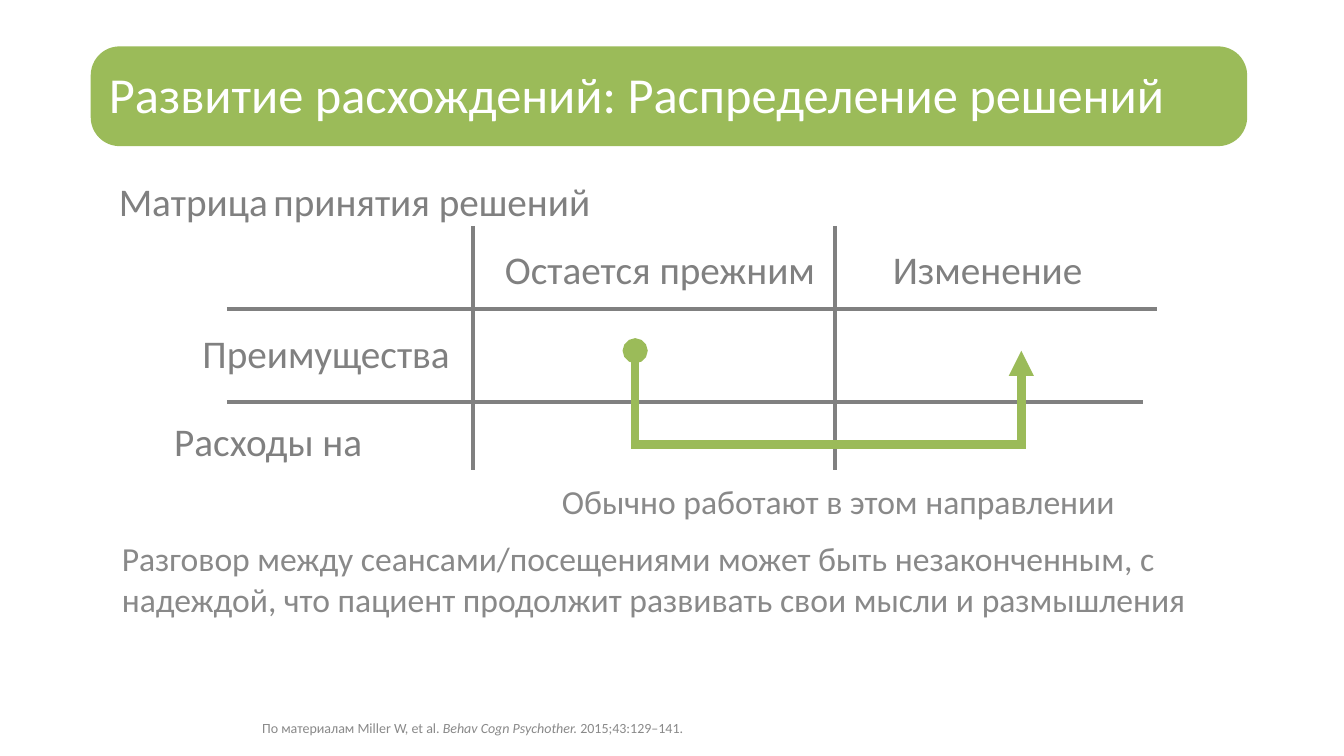
from dataclasses import dataclass

from lxml import etree
from pptx import Presentation
from pptx.dml.color import RGBColor
from pptx.enum.shapes import MSO_CONNECTOR, MSO_SHAPE
from pptx.enum.text import MSO_ANCHOR, PP_ALIGN
from pptx.oxml.ns import qn
from pptx.util import Inches, Pt

STRAIGHT = MSO_CONNECTOR.STRAIGHT
ROUNDED = MSO_SHAPE.ROUNDED_RECTANGLE
LEFT, CENTER = PP_ALIGN.LEFT, PP_ALIGN.CENTER
TOP, MIDDLE, BOTTOM = MSO_ANCHOR.TOP, MSO_ANCHOR.MIDDLE, MSO_ANCHOR.BOTTOM


@dataclass(frozen=True)
class Theme:
    font: str = "Calibri"
    accent: RGBColor = RGBColor(0x9B, 0xBB, 0x59)
    dark: RGBColor = RGBColor(0x80, 0x80, 0x80)
    soft: RGBColor = RGBColor(0x89, 0x89, 0x89)
    white: RGBColor = RGBColor(0xFF, 0xFF, 0xFF)
    title: int = 36
    label: int = 28
    body: int = 24
    gap: int = 18
    source: int = 10
    grid_line: float = 2.75
    arrow_line: float = 6


THEME = Theme()


def add_text(slide, box, parts, size, color, align=LEFT, anchor=TOP,
             inset=True, line_spacing=None):
    shape = slide.shapes.add_textbox(*map(Inches, box))
    frame = shape.text_frame
    frame.word_wrap = True
    frame.vertical_anchor = anchor
    if not inset:
        frame.margin_left = frame.margin_right = 0
        frame.margin_top = frame.margin_bottom = 0
    paragraph = frame.paragraphs[0]
    paragraph.alignment = align
    if line_spacing:
        paragraph.line_spacing = line_spacing
    for part in parts:
        run = paragraph.add_run()
        run.text = part
        run.font.name = THEME.font
        run.font.size = Pt(size)
        run.font.color.rgb = color
    return paragraph


def add_title(slide, box):
    left, top, width, height = box
    banner = slide.shapes.add_shape(ROUNDED, *map(Inches, box))
    banner.adjustments[0] = 0.29
    banner.shadow.inherit = False
    banner.fill.solid()
    banner.fill.fore_color.rgb = THEME.accent
    banner.line.fill.background()
    add_text(slide, (left + 0.18, top + 0.16, width - 0.29, height - 0.27),
             ["Развитие расхождений: Распределение решений"],
             THEME.title, THEME.white, anchor=MIDDLE, inset=False, line_spacing=0.8)


def add_grid_line(slide, start, end):
    line = slide.shapes.add_connector(STRAIGHT, *map(Inches, start + end))
    line.line.color.rgb = THEME.dark
    line.line.width = Pt(THEME.grid_line)
    etree.SubElement(line._element.spPr, qn("a:effectLst"))


def add_direction_arrow(slide, box):
    left, top, width, height = box
    right, bottom = left + width, top + height
    corners = [(left, bottom), (right, bottom), (right, top)]
    builder = slide.shapes.build_freeform(Inches(left), Inches(top))
    builder.add_line_segments([(Inches(x), Inches(y)) for x, y in corners], close=False)
    arrow = builder.convert_to_shape()
    arrow.shadow.inherit = False
    arrow.fill.background()
    arrow.line.color.rgb = THEME.accent
    arrow.line.width = Pt(THEME.arrow_line)
    outline = arrow.line._get_or_add_ln()
    etree.SubElement(outline, qn("a:miter"), lim="800000")
    for end, kind in (("a:headEnd", "oval"), ("a:tailEnd", "triangle")):
        etree.SubElement(outline, qn(end), type=kind)


def add_matrix(slide, box):
    left, top, width, height = box
    heading = add_text(slide, (left - 1.17, top - 0.53, 6.67, 0.57),
                       ["Матрица", " ", "принятия решений"], THEME.label, THEME.dark)
    heading.runs[1].font.size = Pt(THEME.gap)

    for x in (left + 2.44, left + 6.03):
        add_grid_line(slide, (x, top), (x, top + height))
    for y, length in ((top + 0.83, width), (top + 1.75, width - 0.14)):
        add_grid_line(slide, (left, y), (left + length, y))

    labels = [
        ("Остается прежним", 2.59, 0.14, 3.41, CENTER),
        ("Изменение", 6, 0.14, 3.09, CENTER),
        ("Преимущества", -0.34, 0.98, 3.35, LEFT),
        ("Расходы на", -0.62, 1.85, 3.63, LEFT),
    ]
    for label, x, y, label_width, align in labels:
        add_text(slide, (left + x, top + y, label_width, 0.57), [label],
                 THEME.label, THEME.dark, align)

    add_direction_arrow(slide, (left + 4.05, top + 1.24, 3.83, 0.93))
    add_text(slide, (left + 3.01, top + 2.48, 6.11, 0.5),
             ["Обычно работают в этом направлении"], THEME.body, THEME.soft, CENTER)


def add_conclusion(slide, box):
    add_text(slide, box,
             ["Разговор между сеансами/посещениями может быть незаконченным, с надеждой, "
              "что пациент продолжит развивать свои мысли и размышления"],
             THEME.body, THEME.soft)


def add_source(slide, box):
    paragraph = add_text(
        slide, box,
        ["По материалам Miller W, et al. ", "Behav Cogn Psychother. ", "2015;43:129–141."],
        THEME.source, THEME.soft, anchor=BOTTOM, inset=False, line_spacing=0.9)
    paragraph.runs[1].font.italic = True


def main():
    presentation = Presentation()
    presentation.slide_width = Inches(13.33)
    presentation.slide_height = Inches(7.5)
    slide = presentation.slides.add_slide(presentation.slide_layouts[6])
    add_title(slide, (0.9, 0.46, 11.47, 0.99))
    add_matrix(slide, (2.25, 2.24, 9.23, 2.42))
    add_conclusion(slide, (1.11, 5.29, 11.15, 0.9))
    add_source(slide, (2.6, 6.46, 9.82, 0.85))
    presentation.save("out.pptx")


if __name__ == "__main__":
    main()
